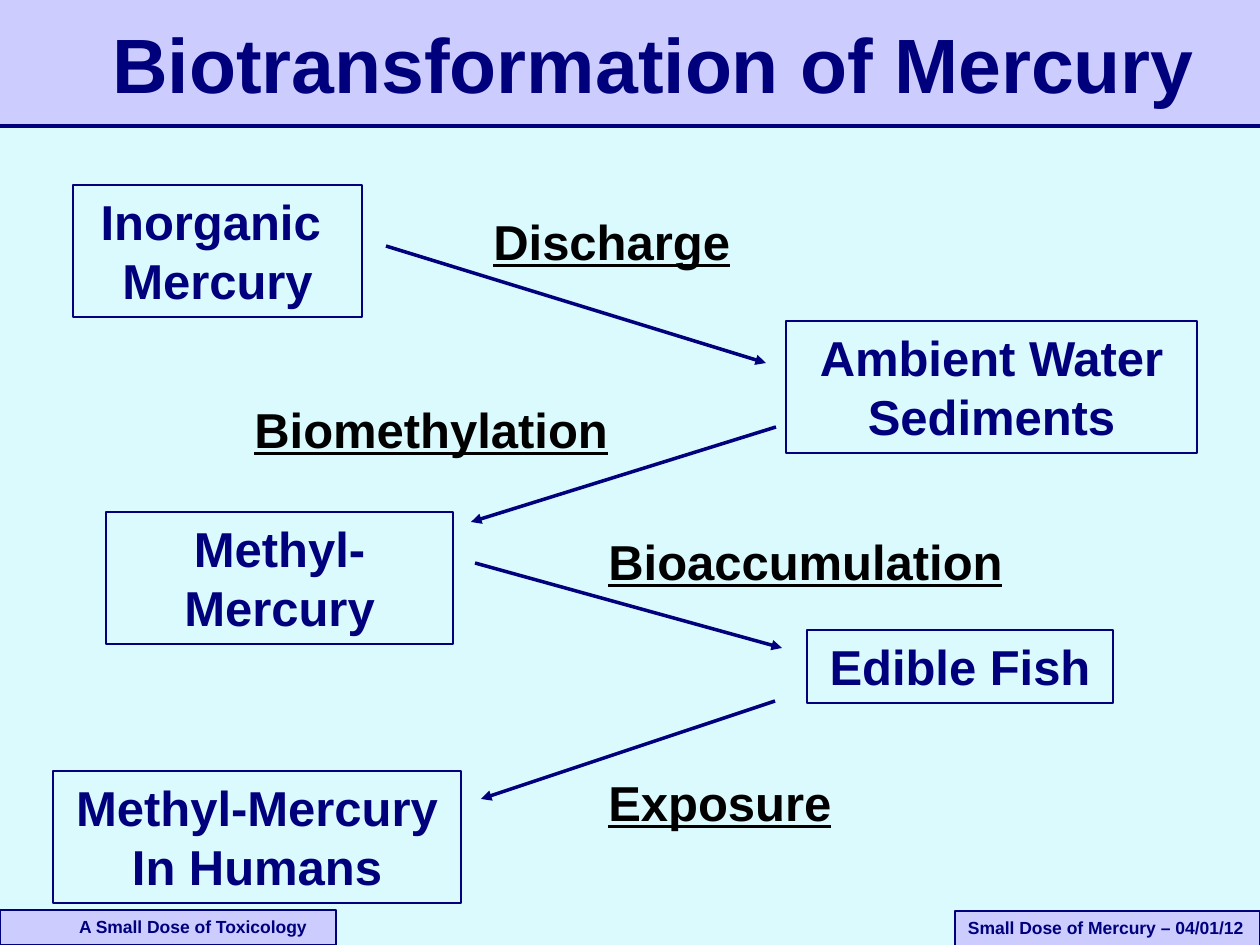
import pptx
import pptx.dml.color
import pptx.enum.shapes
import pptx.enum.text
import pptx.oxml.ns
import pptx.util
from lxml import etree

PX = 914400 / 126
COLORS = {
    "background": "DAFAFE",
    "band": "CCCCFF",
    "navy": "00007D",
    "label": "000000",
}
ALIGN = pptx.enum.text.PP_ALIGN
ANCHOR = pptx.enum.text.MSO_ANCHOR

BOX_HEIGHT = 132
LABEL_HEIGHT = 71

STAGES = [
    ("Ambient Water\nSediments", 786, 321, 411, BOX_HEIGHT),
    ("Edible Fish", 807, 630, 306, 73),
    ("Inorganic \nMercury", 73, 185, 289, BOX_HEIGHT),
    ("Methyl-Mercury", 106, 512, 347, BOX_HEIGHT),
    ("Methyl-Mercury\nIn Humans", 53, 771, 408, BOX_HEIGHT),
]
PROCESSES = [
    ("Biomethylation", 242, 393, 399),
    ("Bioaccumulation", 596, 525, 444),
    ("Exposure", 596, 766, 266),
    ("Discharge", 481, 205, 296),
]
ARROWS = [
    (386, 246, 766, 363),
    (776, 427, 471, 522),
    (475, 563, 782, 648),
    (775, 701, 481, 799),
]


def px(*lengths):
    return [round(n * PX) for n in lengths]


def rgb(name):
    return pptx.dml.color.RGBColor.from_string(COLORS[name])


def set_text(s, text, size, color="navy", align=ALIGN.LEFT,
             anchor=ANCHOR.TOP, underline=None):
    tf = s.text_frame
    tf.word_wrap = True
    tf.vertical_anchor = anchor
    tf.text = text
    for p in tf.paragraphs:
        p.alignment = align
        for r in p.runs:
            r.font.name = "Arial"
            r.font.size = pptx.util.Pt(size)
            r.font.bold = True
            r.font.underline = underline
            r.font.color.rgb = rgb(color)


def add_rect(slide, x, y, w, h, fill=None, line_width=None):
    s = slide.shapes.add_shape(
        pptx.enum.shapes.MSO_SHAPE.RECTANGLE, *px(x, y, w, h))
    s.shadow.inherit = False
    if fill:
        s.fill.solid()
        s.fill.fore_color.rgb = rgb(fill)
    else:
        s.fill.background()
    if line_width:
        s.line.color.rgb = rgb("navy")
        s.line.width = pptx.util.Pt(line_width)
    else:
        s.line.fill.background()
    return s


def add_text(slide, text, x, y, w, h, size, **style):
    s = slide.shapes.add_textbox(*px(x, y, w, h))
    set_text(s, text, size, **style)


def add_footer(slide, text, x, y, w, h, indent):
    s = add_rect(slide, x, y, w, h, "band", 0.75)
    set_text(s, text, 10)
    s.text_frame.margin_left, s.text_frame.margin_right = px(indent, 0)


def add_line(slide, x1, y1, x2, y2, arrow=False):
    s = slide.shapes.add_connector(
        pptx.enum.shapes.MSO_CONNECTOR.STRAIGHT, *px(x1, y1, x2, y2))
    s.line.color.rgb = rgb("navy")
    s.line.width = pptx.util.Pt(2)
    qn = pptx.oxml.ns.qn
    if arrow:
        etree.SubElement(s.line._get_or_add_ln(), qn("a:tailEnd"),
                         type="triangle")
    etree.SubElement(s._element.spPr, qn("a:effectLst"))


def main():
    prs = pptx.Presentation()
    prs.slide_width, prs.slide_height = px(1260, 945)
    slide = prs.slides.add_slide(prs.slide_layouts[6])
    slide.background.fill.solid()
    slide.background.fill.fore_color.rgb = rgb("background")

    add_rect(slide, 0, 0, 1260, 126, "band")
    add_line(slide, 0, 126, 1260, 126)
    add_footer(slide, "A Small Dose of Toxicology", 0, 910, 336, 35, 79)
    add_footer(slide, "Small Dose of Mercury – 04/01/12",
               955, 911, 305, 35, 13)

    for text, *box in STAGES:
        s = add_rect(slide, *box, line_width=1)
        set_text(s, text, 28, align=ALIGN.CENTER)
    for text, x, y, w in PROCESSES:
        add_text(slide, text, x, y, w, LABEL_HEIGHT, 28,
                 color="label", underline=True)
    for ends in ARROWS:
        add_line(slide, *ends, arrow=True)

    add_text(slide, "Biotransformation of Mercury", 53, 10, 1155, 105, 44,
             align=ALIGN.RIGHT, anchor=ANCHOR.MIDDLE)
    prs.save("out.pptx")


if __name__ == "__main__":
    main()
